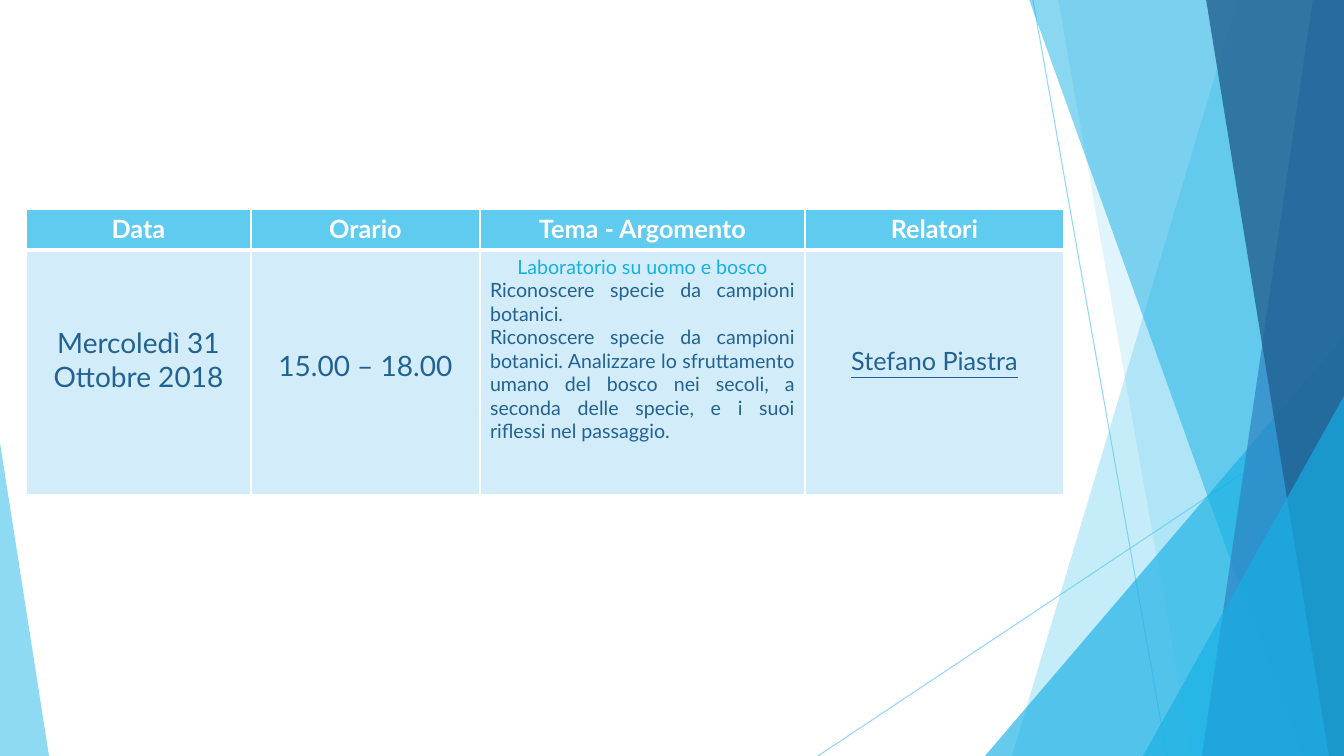
from lxml.etree import SubElement
from pptx import Presentation
from pptx.dml.color import RGBColor
from pptx.enum.shapes import MSO_CONNECTOR, MSO_SHAPE
from pptx.enum.text import PP_ALIGN
from pptx.oxml import parse_xml
from pptx.oxml.ns import nsdecls, qn
from pptx.util import Pt

SCALE = 914400 / 100.8
WIDTH, HEIGHT = 1344, 756
SKY, CYAN, BLUE, NAVY = "5FCBEF", "17B0E4", "2E83C3", "226292"
WHITE, PALE = "FFFFFF", "D2ECF9"
COLUMNS = [225, 229, 325, 259]
ROWS = [41, 245]
HEADINGS = ["Data", "Orario", "Tema - Argomento", "Relatori"]
HEADING = {"size": Pt(18), "bold": True}
LARGE = {"size": Pt(20), "bold": False}
NAME = {"size": Pt(18), "bold": False, "underline": True}
SMALL = {"size": Pt(14), "bold": False}
CENTER, JUSTIFY = PP_ALIGN.CENTER, PP_ALIGN.JUSTIFY
DETAILS = [
    (76, [("Mercoledì 31", CENTER, NAVY, LARGE), ("Ottobre 2018", CENTER, NAVY, LARGE)]),
    (99, [("15.00 – 18.00", CENTER, NAVY, LARGE)]),
    (5, [
        ("Laboratorio su uomo e bosco", CENTER, CYAN, SMALL),
        ("Riconoscere specie da campioni botanici.", JUSTIFY, NAVY, SMALL),
        ("Riconoscere specie da campioni botanici. Analizzare lo sfruttamento umano "
         "del bosco nei secoli, a seconda delle specie, e i suoi riflessi nel passaggio.",
         JUSTIFY, NAVY, SMALL),
    ]),
    (96, [("Stefano Piastra", CENTER, NAVY, NAME)]),
]


def px(length):
    return round(length * SCALE)


def paint(color_format, color):
    color_format.rgb = RGBColor.from_string(color)


def set_alpha(element, percent):
    color = element.find(".//" + qn("a:srgbClr"))
    SubElement(color, qn("a:alpha"), val=str(percent * 1000))


def finish_shape(shape, color, alpha):
    shape.shadow.inherit = False
    shape.line.fill.background()
    shape.fill.solid()
    paint(shape.fill.fore_color, color)
    set_alpha(shape.fill._xPr, alpha)


def add_band(page, top_x, bottom_x, color, alpha):
    builder = page.shapes.build_freeform(top_x, -1, scale=SCALE)
    builder.add_line_segments([(WIDTH, -1), (WIDTH, HEIGHT), (bottom_x, HEIGHT)])
    finish_shape(builder.convert_to_shape(), color, alpha)


def add_triangle(page, left, top, width, apex, color, alpha):
    box = [px(length) for length in (left, top, width, HEIGHT - top)]
    shape = page.shapes.add_shape(MSO_SHAPE.ISOSCELES_TRIANGLE, *box)
    shape.adjustments[0] = apex
    finish_shape(shape, color, alpha)


def add_ray(page, *ends):
    ray = page.shapes.add_connector(MSO_CONNECTOR.STRAIGHT, *[px(end) for end in ends])
    ray.line.width = Pt(0.75)
    paint(ray.line.color, SKY)
    properties = ray._element.spPr
    set_alpha(properties, 70)
    SubElement(properties, qn("a:effectLst"))


def set_borders(cell, top, bottom):
    properties = cell._tc.get_or_add_tcPr()
    widths = {"lnL": 1, "lnR": 1, "lnT": top, "lnB": bottom}
    for position, (side, width) in enumerate(widths.items()):
        border = parse_xml(
            f'<a:{side} {nsdecls("a")} w="{Pt(width)}"><a:solidFill>'
            f'<a:srgbClr val="{WHITE}"/></a:solidFill></a:{side}>'
        )
        properties.insert(position, border)


def fill_cell(cell, color, margin_top, lines):
    cell.fill.solid()
    paint(cell.fill.fore_color, color)
    cell.margin_top = px(margin_top)
    frame = cell.text_frame
    for index, (text, alignment, text_color, font) in enumerate(lines):
        para = frame.add_paragraph() if index else frame.paragraphs[0]
        para.alignment = alignment
        span = para.add_run()
        span.text = text
        paint(span.font.color, text_color)
        for name, value in {"name": "Lato", **font}.items():
            setattr(span.font, name, value)


def add_schedule(page):
    box = [px(length) for length in (26, 209, sum(COLUMNS), sum(ROWS))]
    table = page.shapes.add_table(len(ROWS), len(COLUMNS), *box).table
    table.horz_banding = False
    for column, width in zip(table.columns, COLUMNS):
        column.width = px(width)
    for row, height in zip(table.rows, ROWS):
        row.height = px(height)
    for index, (heading, (margin_top, lines)) in enumerate(zip(HEADINGS, DETAILS)):
        header, body = table.cell(0, index), table.cell(1, index)
        fill_cell(header, SKY, 5, [(heading, CENTER, WHITE, HEADING)])
        fill_cell(body, PALE, margin_top, lines)
        set_borders(header, 1, 3)
        set_borders(body, 3, 1)


def add_backdrop(page):
    add_ray(page, 1033, 0, 1167, HEIGHT)
    add_ray(page, WIDTH, 406, 818, HEIGHT)
    add_band(page, 1238, 1012, SKY, 36)
    add_band(page, 1058, 1192, SKY, 20)
    add_triangle(page, 985, 336, 359, 1, CYAN, 66)
    add_band(page, 1029, 1301, CYAN, 50)
    add_band(page, 1313, 1202, BLUE, 70)
    add_band(page, 1206, 1329, NAVY, 80)
    add_triangle(page, 1143, 396, 201, 1, CYAN, 66)
    add_triangle(page, 0, 443, 49, 0, SKY, 70)


def main():
    deck = Presentation()
    deck.slide_width, deck.slide_height = px(WIDTH), px(HEIGHT)
    page = deck.slides.add_slide(deck.slide_layouts[6])
    add_backdrop(page)
    add_schedule(page)
    deck.save("out.pptx")


if __name__ == "__main__":
    main()
